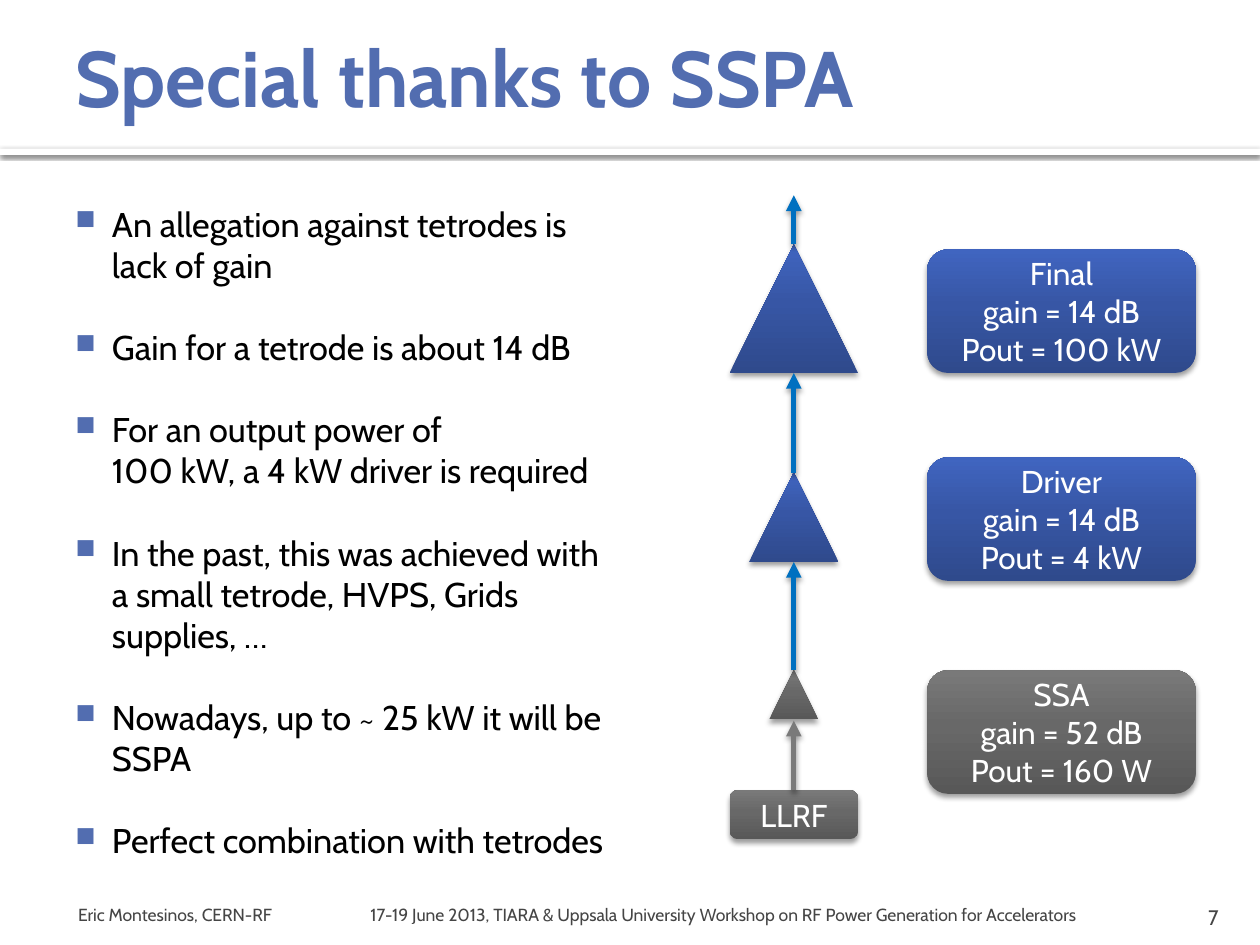
from copy import deepcopy
from lxml.etree import SubElement
from pptx import Presentation
from pptx.dml.color import RGBColor
from pptx.enum.shapes import MSO_CONNECTOR, MSO_SHAPE
from pptx.enum.text import MSO_ANCHOR, PP_ALIGN
from pptx.oxml.ns import qn
from pptx.util import Inches, Pt

FONT = "Cabin"
COLORS = {
    "title": "526DB0", "text": "000000", "foot": "454545", "white": "FFFFFF",
    "arrow": "0070C0", "feed": "7A7A7A", "shade": "000000",
}
GRADS = {
    "blue": ["2F4A8C", "3756A5", "4065C0"],
    "gray": ["585858", "686868", "797979"],
}
AXIS = 6.3
POINTS = [
    "An allegation against tetrodes is lack of gain",
    "Gain for a tetrode is about 14 dB",
    "For an output power of\v100 kW, a 4 kW driver is required",
    "In the past, this was achieved with a small tetrode, HVPS, Grids supplies, …",
    "Nowadays, up to ~ 25 kW it will be SSPA",
    "Perfect combination with tetrodes",
]
STAGES = [
    ("Final\ngain = 14 dB\nPout = 100 kW", 1.98, 1.94, 1.02, "blue"),
    ("Driver\ngain = 14 dB\nPout = 4 kW", 3.63, 3.75, 0.71, "blue"),
    ("SSA\ngain = 52 dB\nPout = 160 W", 5.32, 5.32, 0.39, "gray"),
]
ARROWS = [
    (6.27, 5.72, "feed"), (5.32, 4.46, "arrow"),
    (3.75, 2.96, "arrow"), (1.94, 1.55, "arrow"),
]


def color(name):
    return RGBColor.from_string(COLORS[name])


def style(frame, size, name, bold=False, align=PP_ALIGN.LEFT):
    for para in frame.paragraphs:
        para.alignment = align
        for run in para.runs:
            run.font.name = FONT
            run.font.size = Pt(size)
            run.font.bold = bold
            run.font.color.rgb = color(name)


def add_text(slide, text, box, size, name, inset=(0.1, 0.05, 0.1, 0.05),
             anchor=MSO_ANCHOR.MIDDLE, **look):
    frame = slide.shapes.add_textbox(*map(Inches, box)).text_frame
    frame.word_wrap = True
    frame.vertical_anchor = anchor
    (frame.margin_left, frame.margin_top,
     frame.margin_right, frame.margin_bottom) = map(Inches, inset)
    frame.text = text
    style(frame, size, name, **look)
    return frame


def add_shadow(shape, alpha=38, blur=3.1, dist=2):
    props = shape._element.spPr
    for old in props.findall(qn("a:effectLst")):
        props.remove(old)
    effects = SubElement(props, qn("a:effectLst"))
    outer = SubElement(effects, qn("a:outerShdw"), blurRad=str(Pt(blur)),
                       dist=str(Pt(dist)), dir="5400000", rotWithShape="0")
    tone = SubElement(outer, qn("a:srgbClr"), val=COLORS["shade"])
    SubElement(tone, qn("a:alpha"), val=str(alpha * 1000))


def add_block(slide, kind, box, grad, text=""):
    shape = slide.shapes.add_shape(kind, *map(Inches, box))
    shape.line.fill.background()
    shape.fill.gradient()
    shape.fill.gradient_angle = 90
    stops = shape._element.spPr.find(".//" + qn("a:gsLst"))
    stops.insert(1, deepcopy(stops[0]))
    for stop, spot, tone in zip(shape.fill.gradient_stops, (0, 0.55, 1), GRADS[grad]):
        stop.position = spot
        stop.color.rgb = RGBColor.from_string(tone)
    add_shadow(shape)
    if text:
        frame = shape.text_frame
        frame.vertical_anchor = MSO_ANCHOR.MIDDLE
        frame.text = text
        style(frame, 18, "white", align=PP_ALIGN.CENTER)


def add_arrow(slide, start, end, name):
    x = Inches(AXIS)
    link = slide.shapes.add_connector(
        MSO_CONNECTOR.STRAIGHT, x, Inches(start), x, Inches(end))
    link.line.color.rgb = color(name)
    link.line.width = Pt(3)
    SubElement(link.line._get_or_add_ln(), qn("a:tailEnd"), type="triangle")
    add_shadow(link)


def add_rule(slide):
    rule = slide.shapes.add_shape(
        MSO_SHAPE.RECTANGLE, 0, Inches(1.18), Inches(10), Inches(0.05))
    rule.fill.solid()
    rule.fill.fore_color.rgb = color("white")
    rule.line.fill.background()
    add_shadow(rule, 60, 2.5, 0.8)


def add_list(slide):
    frame = add_text(slide, "\n".join(POINTS), (0.5, 1.39, 4.42, 5.61), 19.6,
                     "text", (0.1, 0.1, 0.1, 0.05))
    for i, para in enumerate(frame.paragraphs):
        if i:
            para.space_before = Pt(23.5)
        props = para._p.get_or_add_pPr()
        props.set("marL", str(Inches(0.29)))
        props.set("indent", str(-Inches(0.29)))
        tint = SubElement(props, qn("a:buClr"))
        SubElement(tint, qn("a:srgbClr"), val=COLORS["title"])
        SubElement(props, qn("a:buSzPct"), val="80000")
        SubElement(props, qn("a:buChar"), char="■")


def add_foot(slide):
    add_text(slide, "Eric Montesinos, CERN-RF", (0.5, 7.08, 2.33, 0.3), 10,
             "foot", (0.12, 0.05, 0.05, 0))
    add_text(slide, "17-19 June 2013, TIARA & Uppsala University Workshop on "
             "RF Power Generation for Accelerators", (2.89, 7.08, 6.02, 0.3),
             10, "foot", (0.05, 0.05, 0.05, 0))
    add_text(slide, "7", (8.97, 7.08, 0.8, 0.3), 12, "foot",
             (0.1, 0.05, 0.1, 0), MSO_ANCHOR.BOTTOM, align=PP_ALIGN.RIGHT)


def main():
    deck = Presentation()
    deck.slide_width, deck.slide_height = Inches(10), Inches(7.5)
    slide = deck.slides.add_slide(deck.slide_layouts[6])
    add_rule(slide)
    add_text(slide, "Special thanks to SSPA", (0.5, 0.17, 9, 0.87), 45,
             "title", bold=True)
    add_list(slide)
    add_foot(slide)
    add_block(slide, MSO_SHAPE.ROUNDED_RECTANGLE,
              (AXIS - 0.51, 6.27, 1.02, 0.39), "gray", "LLRF")
    for text, top, peak, side, grad in STAGES:
        add_block(slide, MSO_SHAPE.ISOSCELES_TRIANGLE,
                  (AXIS - side / 2, peak, side, side), grad)
        add_block(slide, MSO_SHAPE.ROUNDED_RECTANGLE,
                  (7.36, top, 2.13, 0.98), grad, text)
    for arrow in ARROWS:
        add_arrow(slide, *arrow)
    deck.save("out.pptx")


if __name__ == "__main__":
    main()
